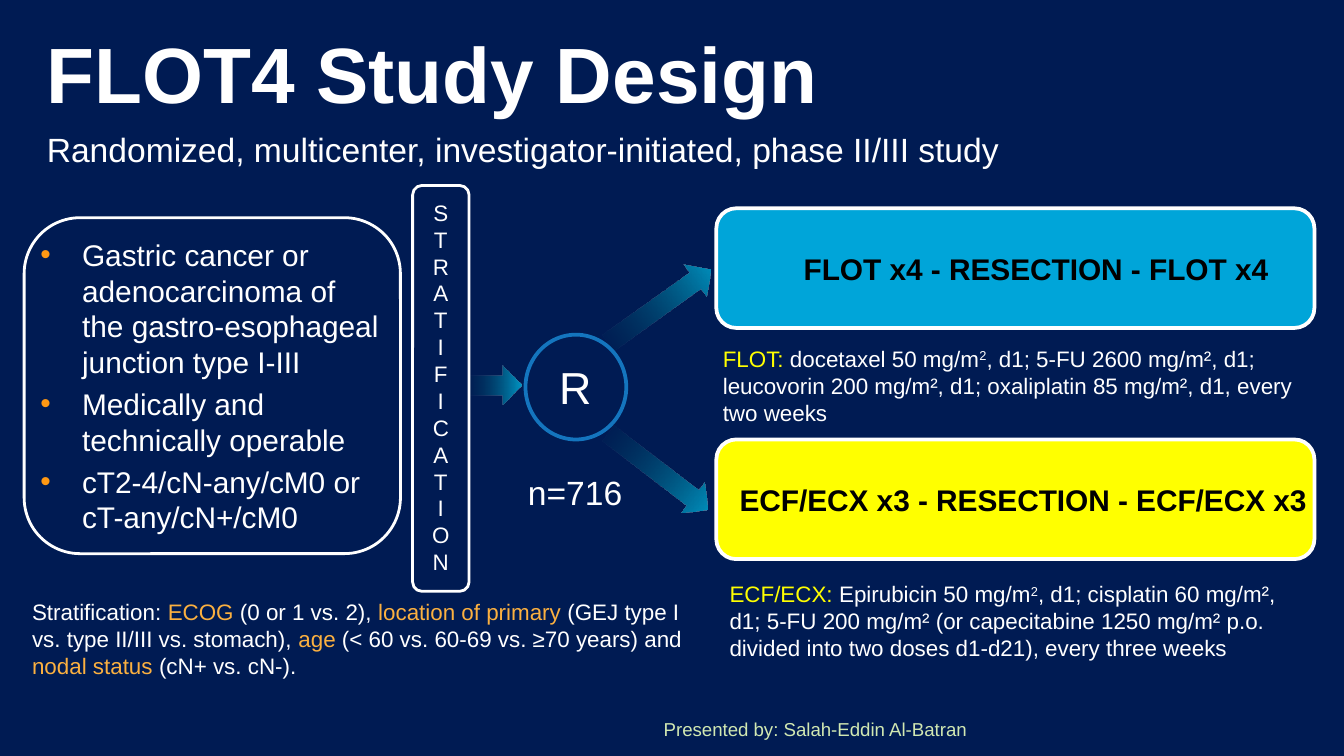
"""Builds the FLOT4 study design slide."""
import dataclasses
import typing

import lxml.etree
import pptx
import pptx.dml.color
import pptx.enum.shapes
import pptx.enum.text
import pptx.oxml.ns
import pptx.util

SHAPES = pptx.enum.shapes.MSO_SHAPE
TOP = pptx.enum.text.MSO_ANCHOR.TOP
MIDDLE = pptx.enum.text.MSO_ANCHOR.MIDDLE
LEFT = pptx.enum.text.PP_ALIGN.LEFT
CENTER = pptx.enum.text.PP_ALIGN.CENTER
COLUMNS = 100
ROWS = 56.25
CELL = pptx.util.Inches(10) // COLUMNS
COLOURS = {
    "navy": "001B53", "white": "FFFFFF", "black": "000000", "cyan": "00A5D9",
    "yellow": "FFFF00", "amber": "FBB040", "bullet": "FF9813", "ring": "1475BE",
    "arrow tail": "00465C", "arrow head": "0097C6", "credit": "D1E8B2",
}
NO_INSETS = dict.fromkeys(("margin_left", "margin_right", "margin_top", "margin_bottom"), 0)
STRATA_INSETS = dict.fromkeys(NO_INSETS, pptx.util.Inches(0.08))


class Area(typing.NamedTuple):
    """Position and size in grid cells."""
    column: float
    row: float
    columns: float
    rows: float


class Words(typing.NamedTuple):
    """A stretch of text in one colour."""
    text: str
    colour: str = "white"
    raised: bool = False


@dataclasses.dataclass
class Passage:
    """Paragraphs of words with their formats."""
    paragraphs: list[list[Words]]
    size: float
    bold: bool = False
    bulleted: bool = False
    frame: dict = dataclasses.field(default_factory=dict)
    paragraph: dict = dataclasses.field(default_factory=dict)


@dataclasses.dataclass
class Panel:
    """An outlined shape with optional text."""
    area: Area
    outline: str
    weight: float
    kind: SHAPES = SHAPES.ROUNDED_RECTANGLE
    fill: str | None = None
    passage: Passage | None = None


class Arrow(typing.NamedTuple):
    """A fading arrow and its turn in degrees."""
    area: Area
    turn: float = 0


def rgb(colour: str) -> pptx.dml.color.RGBColor:
    """Look up a named colour."""
    return pptx.dml.color.RGBColor.from_string(COLOURS[colour])


def cells(area: Area) -> list[int]:
    """Convert grid cells to slide lengths."""
    return [round(length * CELL) for length in area]


def apply(target: typing.Any, formats: dict) -> None:
    """Set each format value on the target."""
    for attribute, value in formats.items():
        setattr(target, attribute, value)


def add_bullet(paragraph: typing.Any) -> None:
    """Give a paragraph a coloured hanging bullet."""
    properties = paragraph._p.get_or_add_pPr()
    indent = pptx.util.Inches(0.31)
    apply(properties, {"marL": indent, "indent": -indent}) if hasattr(properties, "marL") else None
    properties.set("marL", str(indent))
    properties.set("indent", str(-indent))
    tint = lxml.etree.SubElement(properties, pptx.oxml.ns.qn("a:buClr"))
    lxml.etree.SubElement(tint, pptx.oxml.ns.qn("a:srgbClr"), val=COLOURS["bullet"])
    lxml.etree.SubElement(properties, pptx.oxml.ns.qn("a:buFont"), typeface="Arial")
    lxml.etree.SubElement(properties, pptx.oxml.ns.qn("a:buChar"), char="•")


def write(frame: typing.Any, passage: Passage) -> None:
    """Fill a text frame with a passage."""
    apply(frame, {"word_wrap": True} | passage.frame)
    for index, stretch in enumerate(passage.paragraphs):
        paragraph = frame.add_paragraph() if index else frame.paragraphs[0]
        apply(paragraph, {"alignment": LEFT} | passage.paragraph)
        if passage.bulleted:
            add_bullet(paragraph)
        for words in stretch:
            run = paragraph.add_run()
            run.text = words.text
            apply(run.font, {"name": "Arial", "size": pptx.util.Pt(passage.size), "bold": passage.bold})
            run.font.color.rgb = rgb(words.colour)
            if words.raised:
                run._r.get_or_add_rPr().set("baseline", "30000")


def draw_panel(slide: typing.Any, panel: Panel) -> None:
    """Draw an outlined panel."""
    shape = slide.shapes.add_shape(panel.kind, *cells(panel.area))
    shape.shadow.inherit = False
    if panel.fill:
        shape.fill.solid()
        shape.fill.fore_color.rgb = rgb(panel.fill)
    else:
        shape.fill.background()
    shape.line.color.rgb = rgb(panel.outline)
    shape.line.width = pptx.util.Pt(panel.weight)
    if panel.passage:
        write(shape.text_frame, panel.passage)


def draw_arrow(slide: typing.Any, arrow: Arrow) -> None:
    """Draw an arrow that fades in from its tail."""
    shape = slide.shapes.add_shape(SHAPES.RIGHT_ARROW, *cells(arrow.area))
    shape.shadow.inherit = False
    shape.rotation = arrow.turn
    shape.line.fill.background()
    shape.fill.gradient()
    shape.fill.gradient_angle = 0
    for stop, colour in zip(shape.fill.gradient_stops, ("arrow tail", "arrow head")):
        stop.color.rgb = rgb(colour)
    tail = next(shape._element.spPr.iter(pptx.oxml.ns.qn("a:srgbClr")))
    lxml.etree.SubElement(tail, pptx.oxml.ns.qn("a:alpha"), val="0")


def draw_text(slide: typing.Any, area: Area, passage: Passage) -> None:
    """Draw a free text box."""
    write(slide.shapes.add_textbox(*cells(area)).text_frame, passage)


def arm(row: float, fill: str, label: str, shift: float) -> Panel:
    """Describe one treatment arm."""
    frame = NO_INSETS | {"word_wrap": False, "vertical_anchor": MIDDLE, "margin_left": pptx.util.Inches(shift)}
    passage = Passage([[Words(label, "black")]], 16, bold=True, frame=frame, paragraph={"alignment": CENTER})
    return Panel(Area(53.3, row, 44.5, 8.9), "white", 2, fill=fill, passage=passage)


def regimen(name: str, start: str, rest: str) -> Passage:
    """Describe the doses of one arm."""
    return Passage([[Words(name, "yellow"), Words(start), Words("2", raised=True), Words(rest)]], 12)


CRITERIA = Passage(
    [[Words("Gastric cancer or adenocarcinoma of the gastro-esophageal junction type I-III")],
     [Words("Medically and technically operable")],
     [Words("cT2-4/cN-any/cM0 or cT-any/cN+/cM0")]],
    16, bulleted=True, frame=NO_INSETS | {"vertical_anchor": MIDDLE},
    paragraph={"space_after": pptx.util.Pt(3.2)})
STRATA = Passage([[Words(letters)] for letters in "S T RA T I F I CA T I ON".split()], 12,
                 frame=STRATA_INSETS | {"vertical_anchor": TOP}, paragraph={"alignment": CENTER})
FACTORS = [
    Words("Stratification: "), Words("ECOG", "amber"), Words(" (0 or 1 vs. 2), "),
    Words("location of primary ", "amber"), Words("(GEJ type I vs. type II/III vs. stomach), "),
    Words("age", "amber"), Words(" (< 60 vs. 60-69 vs. ≥70 years) and "),
    Words("nodal status ", "amber"), Words("(cN+ vs. cN-)."),
]
PANELS = [
    arm(15.5, "cyan", "FLOT x4 - RESECTION - FLOT x4", 0.31),
    arm(32.7, "yellow", "ECF/ECX x3 - RESECTION - ECF/ECX x3", 0.12),
    Panel(Area(1.8, 16.2, 28, 25), "white", 1.5, passage=CRITERIA),
    Panel(Area(39.1, 24.9, 7.5, 7.8), "ring", 2, kind=SHAPES.OVAL),
    Panel(Area(30.7, 13.8, 4.2, 30.2), "white", 1.5, passage=STRATA),
]
ARROWS = [
    Arrow(Area(34.7, 27.2, 4.1, 2.9)),
    Arrow(Area(44.4, 21.3, 9.3, 2.9), 324.5),
    Arrow(Area(44.3, 33.6, 9.3, 2.9), 37.6),
]
TEXTS = [
    (Area(2.5, 2.4, 94.2, 6),
     Passage([[Words("FLOT4 Study Design")]], 42, bold=True, frame={"vertical_anchor": MIDDLE})),
    (Area(2.5, 9.1, 74.2, 4),
     Passage([[Words("Randomized, multicenter, investigator-initiated, phase II/III study")]], 18,
             frame={"word_wrap": False})),
    (Area(41.6, 26.8, 2.5, 4), Passage([[Words("R")]], 24, frame=NO_INSETS)),
    (Area(38.3, 34.6, 9.1, 4), Passage([[Words("n=716")]], 18, frame={"word_wrap": False})),
    (Area(52.8, 25.2, 45, 7.1),
     regimen("FLOT:", " docetaxel 50 mg/m", ", d1; 5-FU 2600 mg/m², d1; leucovorin 200 mg/m², d1; "
             "oxaliplatin 85 mg/m², d1, every two weeks")),
    (Area(53.3, 42.7, 44.5, 7.1),
     regimen("ECF/ECX: ", "Epirubicin 50 mg/m", ", d1; cisplatin 60 mg/m², d1; 5-FU 200 mg/m² "
             "(or capecitabine 1250 mg/m² p.o. divided into two doses d1-d21), every three weeks")),
    (Area(1.4, 44, 50.8, 7.1), Passage([FACTORS], 12)),
    (Area(48.4, 53, 31.7, 2.5),
     Passage([[Words("Presented by: Salah-Eddin Al-Batran", "credit")]], 10, frame={"vertical_anchor": MIDDLE})),
]


def main() -> None:
    """Build and save the slide."""
    deck = pptx.Presentation()
    apply(deck, {"slide_width": COLUMNS * CELL, "slide_height": round(ROWS * CELL)})
    slide = deck.slides.add_slide(deck.slide_layouts[6])
    slide.background.fill.solid()
    slide.background.fill.fore_color.rgb = rgb("navy")
    for arrow in ARROWS:
        draw_arrow(slide, arrow)
    for panel in PANELS:
        draw_panel(slide, panel)
    for area, passage in TEXTS:
        draw_text(slide, area, passage)
    deck.save("out.pptx")


if __name__ == "__main__":
    main()
